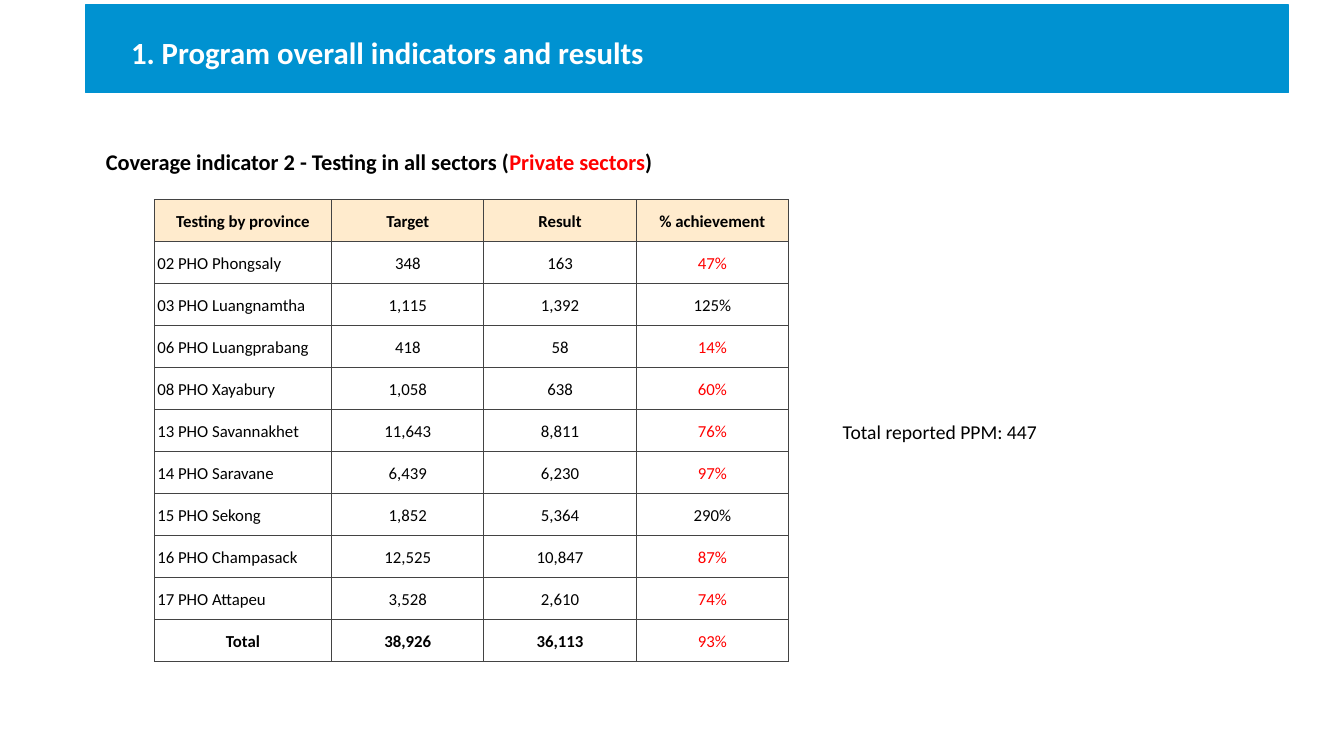
import pptx
import pptx.dml.color
import pptx.enum.shapes
import pptx.enum.text
import pptx.oxml
import pptx.oxml.ns
import pptx.util
from pptx.util import Inches

# Content
TITLE = "1. Program overall indicators and results"
SUBTITLE = [("Coverage indicator 2 - Testing in all sectors (", "text"),
            ("Private sectors", "alert"), (")", "text")]
NOTE = "Total reported PPM: 447"
HEADERS = ["Testing by province", "Target", "Result", "% achievement"]
PROVINCES = [
    ("02 PHO Phongsaly", 348, 163),
    ("03 PHO Luangnamtha", 1115, 1392),
    ("06 PHO Luangprabang", 418, 58),
    ("08 PHO Xayabury", 1058, 638),
    ("13 PHO Savannakhet", 11643, 8811),
    ("14 PHO Saravane", 6439, 6230),
    ("15 PHO Sekong", 1852, 5364),
    ("16 PHO Champasack", 12525, 10847),
    ("17 PHO Attapeu", 3528, 2610),
]

THEME = {
    "font": "Calibri",
    "colors": {"bar": "0092D1", "title": "FFFFFF", "text": "000000",
               "alert": "FF0000", "header": "FFEBCD", "border": "434343"},
    "sizes": {"title": 22, "subtitle": 16, "note": 14, "table": 12},
}
COLUMN_WIDTHS = [1.76, 1.51, 1.51, 1.51]
TABLE_HEIGHT = 4.58
CENTER = pptx.enum.text.PP_ALIGN.CENTER
LEFT = pptx.enum.text.PP_ALIGN.LEFT
MIDDLE = pptx.enum.text.MSO_ANCHOR.MIDDLE


def color(name):
    return pptx.dml.color.RGBColor.from_string(THEME["colors"][name])


def write(frame, parts, size, bold=False, align=LEFT, spacing=1.0):
    """Fill the first paragraph with (text, colour name) parts."""
    paragraph = frame.paragraphs[0]
    paragraph.alignment = align
    paragraph.line_spacing = spacing
    for text, color_name in parts:
        run = paragraph.add_run()
        run.text = text
        run.font.name = THEME["font"]
        run.font.size = pptx.util.Pt(THEME["sizes"][size])
        run.font.bold = bold
        run.font.color.rgb = color(color_name)


def set_margins(target, left, top, right, bottom):
    target.margin_left, target.margin_top = Inches(left), Inches(top)
    target.margin_right, target.margin_bottom = Inches(right), Inches(bottom)


def add_text(slide, left, top, width, height, margin):
    frame = slide.shapes.add_textbox(
        Inches(left), Inches(top), Inches(width), Inches(height)).text_frame
    frame.word_wrap = True
    set_margins(frame, margin, margin, margin, margin)
    return frame


def add_borders(cell):
    properties = cell._tc.get_or_add_tcPr()
    for index, side in enumerate("LRTB"):
        properties.insert(index, pptx.oxml.parse_xml(
            f'<a:ln{side} {pptx.oxml.ns.nsdecls("a")} w="{pptx.util.Pt(0.83)}">'
            f'<a:solidFill><a:srgbClr val="{THEME["colors"]["border"]}"/></a:solidFill>'
            f'</a:ln{side}>'))


def table_rows():
    """Return the header, province and total rows as text and colour."""
    total = ("Total", sum(row[1] for row in PROVINCES), sum(row[2] for row in PROVINCES))
    rows = [[(header, "text") for header in HEADERS]]
    for name, target, result in PROVINCES + [total]:
        rows.append([(name, "text"), (f"{target:,}", "text"), (f"{result:,}", "text"),
                     (f"{result / target:.0%}", "alert" if result < target else "text")])
    return rows


def add_results_table(slide):
    rows = table_rows()
    table = slide.shapes.add_table(
        len(rows), len(HEADERS), Inches(1.53), Inches(1.98),
        Inches(sum(COLUMN_WIDTHS)), Inches(TABLE_HEIGHT)).table
    table.horz_banding = False
    for column, width in zip(table.columns, COLUMN_WIDTHS):
        column.width = Inches(width)
    last = len(rows) - 1
    for row_index, row in enumerate(rows):
        table.rows[row_index].height = Inches(TABLE_HEIGHT / len(rows))
        for column_index, part in enumerate(row):
            cell = table.cell(row_index, column_index)
            is_header, is_total = row_index == 0, row_index == last
            is_province = column_index == 0 and not (is_header or is_total)
            set_margins(cell, 0.03, 0.02, 0.03, 0.02)
            cell.vertical_anchor = MIDDLE
            if is_header:
                cell.fill.solid()
                cell.fill.fore_color.rgb = color("header")
            else:
                cell.fill.background()
            add_borders(cell)
            write(cell.text_frame, [part], "table", spacing=1.15,
                  bold=is_header or (is_total and column_index < 3),
                  align=LEFT if is_province else CENTER)


def main():
    presentation = pptx.Presentation()
    presentation.slide_width, presentation.slide_height = Inches(13.33), Inches(7.5)
    slide = presentation.slides.add_slide(presentation.slide_layouts[6])

    # Coverage heading
    heading = add_text(slide, 1.05, 1.39, 11.93, 0.45, margin=0)
    write(heading, SUBTITLE, "subtitle", bold=True, spacing=1.3)

    # Title bar
    bar = slide.shapes.add_shape(
        pptx.enum.shapes.MSO_SHAPE.RECTANGLE,
        Inches(0.85), Inches(0.05), Inches(11.93), Inches(0.87))
    bar.shadow.inherit = False
    bar.fill.solid()
    bar.fill.fore_color.rgb = color("bar")
    bar.line.color.rgb = color("bar")
    bar.line.width = pptx.util.Pt(0.75)
    bar.text_frame.word_wrap = True
    bar.text_frame.vertical_anchor = MIDDLE
    set_margins(bar.text_frame, 0.45, 0, 0, 0)
    write(bar.text_frame, [(TITLE, "title")], "title", bold=True, spacing=1.2)

    # Results by province
    add_results_table(slide)

    # Side note
    note = add_text(slide, 8.26, 4.07, 2.96, 0.44, margin=0.1)
    write(note, [(NOTE, "text")], "note")

    presentation.save("out.pptx")


if __name__ == "__main__":
    main()
